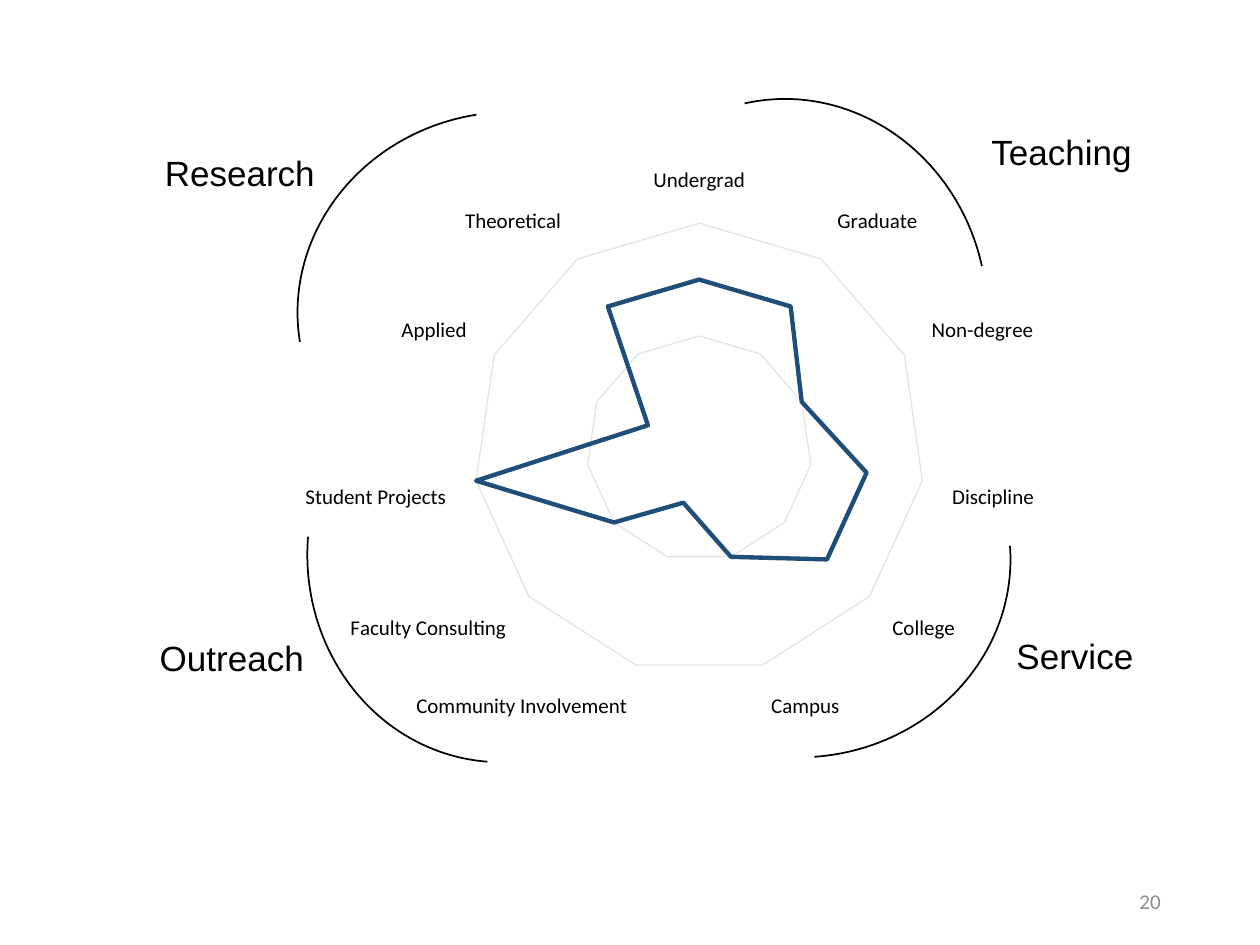
"""Builds a slide with a radar chart of academic roles framed by four arcs."""
import pptx
import pptx.chart.data
import pptx.dml.color
import pptx.enum.chart
import pptx.enum.shapes
import pptx.enum.text
import pptx.util
from dataclasses import dataclass

Pt = pptx.util.Pt


@dataclass(frozen=True)
class Theme:
    ink: str = "000000"
    muted: str = "8C8C8C"
    grid: str = "E0E5EB"
    series: str = "1F4E79"
    head_font: str = "Arial"
    body_font: str = "Calibri"
    head_size: int = 20
    label_size: int = 12
    chart_size: int = 10


T = Theme()
HEADINGS = [
    ("Outreach", 84.2, 360, 111.6),
    ("Teaching", 559.4, 71.3, 97.2),
    ("Research", 87.1, 82.8, 110.9),
    ("Service", 573.8, 359.3, 89.3),
]
HEADING_HEIGHT = 29.5
ARCS = [
    (339.8, 56.2, 347.6),
    (345.6, 200.9, 86),
    (177.8, 56.2, 261),
    (175.7, 195.8, 184.6),
]
ARC_SIZE = (223.9, 239.8)
ARC_START = 161.85
PAGE = ("20", 508.3, 500.4, 162, 28.8)
CHART_BOX = (126, 83.5, 516.2, 339.1)
PLOT_LAYOUT = {"x": 0.28, "y": 0.13, "w": 0.5, "h": 0.76}
RATINGS = [
    ("Undergrad", 75),
    ("Graduate", 75),
    ("Non-degree", 50),
    ("Discipline", 75),
    ("College", 75),
    ("Campus", 50),
    ("Community Involvement", 25),
    ("Faculty Consulting", 50),
    ("Student Projects", 100),
    ("Applied", 25),
    ("Theoretical", 75),
]


def rgb(value):
    return pptx.dml.color.RGBColor.from_string(value)


def set_all(target, values):
    for name, value in values.items():
        setattr(target, name, value)


def set_font(font, name, size, color):
    set_all(font, {"name": name, "size": Pt(size)})
    font.color.rgb = rgb(color)


def set_line(line, color, width):
    line.color.rgb = rgb(color)
    line.width = Pt(width)


def add_text(s, text, box, font, frame=None, align=None):
    tf = s.shapes.add_textbox(*map(Pt, box)).text_frame
    set_all(tf, {"word_wrap": True, **(frame or {})})
    p = tf.paragraphs[0]
    p.alignment = align
    r = p.add_run()
    r.text = text
    set_font(r.font, *font)


def add_arc(s, left, top, rotation):
    kind = pptx.enum.shapes.MSO_SHAPE.ARC
    sp = s.shapes.add_shape(kind, *map(Pt, (left, top, *ARC_SIZE)))
    sp.rotation = rotation
    sp.adjustments[0] = ARC_START
    sp.adjustments[1] = 0
    sp.shadow.inherit = False
    sp.fill.background()
    set_line(sp.line, T.ink, 1)


def set_plot_layout(chart):
    area = chart.plots[0]._element.getparent()
    ns = 'xmlns:c="http://schemas.openxmlformats.org/drawingml/2006/chart"'
    modes = '<c:layoutTarget val="inner"/><c:xMode val="edge"/><c:yMode val="edge"/>'
    sizes = "".join(f'<c:{k} val="{v}"/>' for k, v in PLOT_LAYOUT.items())
    layout = pptx.oxml.parse_xml(
        f"<c:layout {ns}><c:manualLayout>{modes}{sizes}</c:manualLayout></c:layout>"
    )
    for old in area.findall(layout.tag):
        area.remove(old)
    area.insert(0, layout)


def add_radar(s):
    data = pptx.chart.data.CategoryChartData()
    names, values = zip(*RATINGS)
    data.categories = names
    data.add_series("Series 1", values)
    kind = pptx.enum.chart.XL_CHART_TYPE.RADAR
    chart = s.shapes.add_chart(kind, *map(Pt, CHART_BOX), data).chart
    set_all(chart, {"has_legend": False, "has_title": False})
    set_font(chart.font, T.body_font, T.chart_size, T.ink)
    set_plot_layout(chart)

    no_tick = pptx.enum.chart.XL_TICK_MARK.NONE
    cat, val = chart.category_axis, chart.value_axis
    set_all(cat, {"has_major_gridlines": False, "major_tick_mark": no_tick})
    set_font(cat.tick_labels.font, T.body_font, T.label_size, T.ink)
    set_line(cat.format.line, T.grid, 0.75)
    set_all(val, {
        "minimum_scale": 0,
        "maximum_scale": 100,
        "major_unit": 50,
        "has_major_gridlines": True,
        "visible": False,
    })
    set_line(val.major_gridlines.format.line, T.grid, 0.75)

    plot = chart.plots[0]
    plot.vary_by_categories = False
    series = plot.series[0]
    set_line(series.format.line, T.series, 2.5)
    series.marker.style = pptx.enum.chart.XL_MARKER_STYLE.NONE


def main():
    prs = pptx.Presentation()
    set_all(prs, {"slide_width": Pt(720), "slide_height": Pt(540)})
    s = prs.slides.add_slide(prs.slide_layouts[6])
    for text, *box in HEADINGS:
        add_text(s, text, (*box, HEADING_HEIGHT), (T.head_font, T.head_size, T.ink))
    for arc in ARCS:
        add_arc(s, *arc)
    number, *box = PAGE
    add_text(
        s, number, box, (T.body_font, T.label_size, T.muted),
        {"vertical_anchor": pptx.enum.text.MSO_ANCHOR.MIDDLE},
        pptx.enum.text.PP_ALIGN.RIGHT,
    )
    add_radar(s)
    prs.save("out.pptx")


if __name__ == "__main__":
    main()
